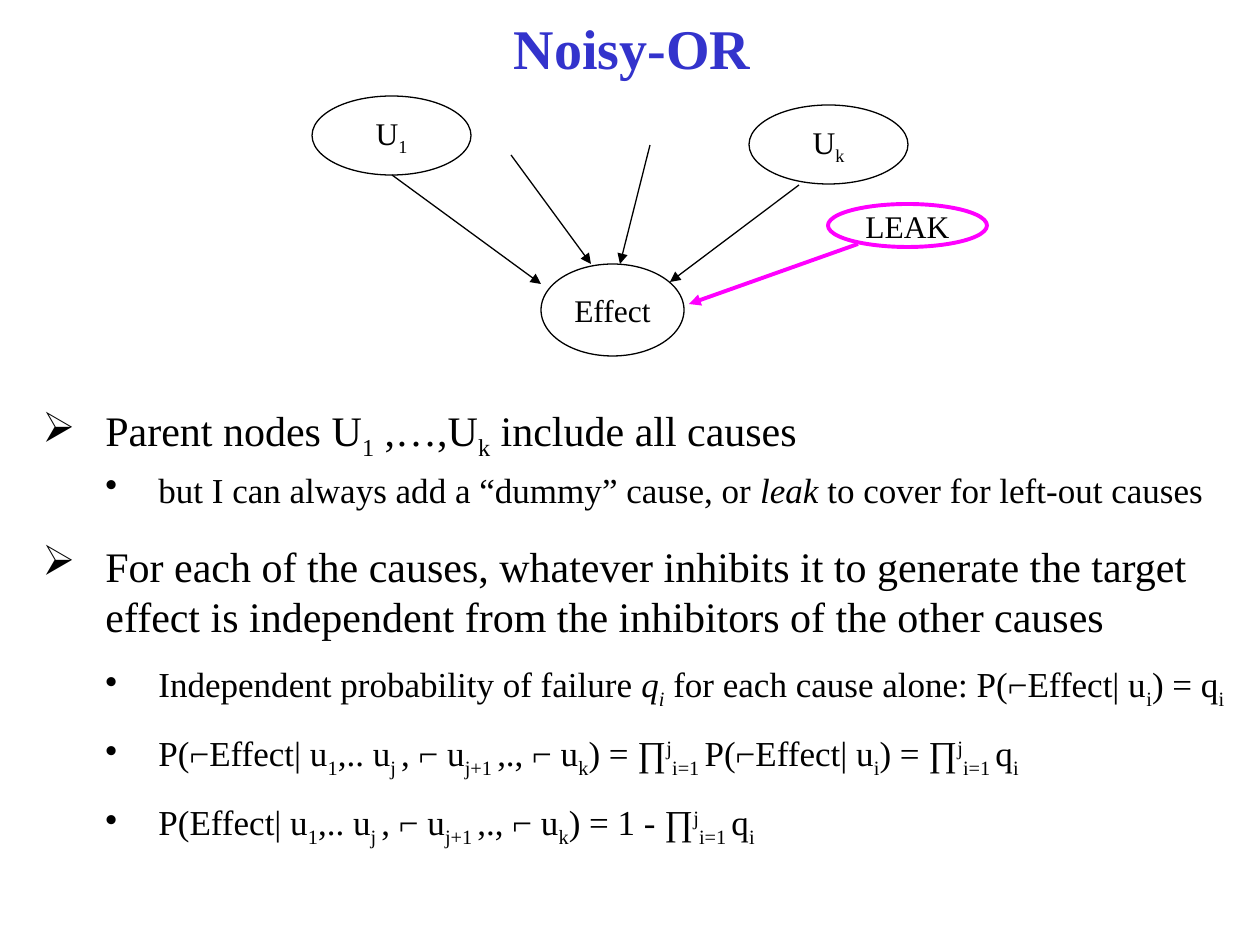
from pptx import Presentation, util as u
from pptx.dml.color import RGBColor
from pptx.enum import shapes, text
from pptx.oxml.ns import qn
from lxml import etree

PX = 914400 / 126
FONT = "Times New Roman"
BLACK, BLUE, PINK = "000000", "3333CC", "FF00FF"
BASELINE = {"sub": "-25000", "sup": "30000"}

TITLE = "Noisy-OR"
NODES = [
    ((312, 96, 159, 79), [("U", ""), ("1", "sub")], BLACK, 0.75),
    ((541, 264, 143, 92), [("Effect", "")], BLACK, 0.75),
    ((749, 105, 159, 79), [("U", ""), ("k", "sub")], BLACK, 0.75),
    ((828, 204, 159, 43), [("LEAK", "")], PINK, 2.25),
]
ARROWS = [
    ((392, 175), (541, 284), BLACK, 0.75),
    ((799, 185), (670, 282), BLACK, 0.75),
    ((511, 155), (591, 264), BLACK, 0.75),
    ((650, 145), (620, 264), BLACK, 0.75),
    ((858, 244), (689, 304), PINK, 2.25),
]

CAUSES = [("1", "sub"), (",.. u", ""), ("j ", "sub"), (", ⌐ u", ""),
          ("j+1 ", "sub"), (",., ⌐ u", ""), ("k", "sub")]
PRODUCT = [("j", "sup"), ("i=1 ", "sub")]
PRODUCT_Q = PRODUCT + [("q", ""), ("i", "sub")]
BODY = [
    (0, 0, 1, [("Parent nodes U", ""), ("1", "sub"), (" ,…,U", ""), ("k", "sub"),
               (" include all causes", "")]),
    (1, 4, 1, [("but I can always add a “dummy” cause, or ", ""), ("leak", "italic"),
               (" to cover for left-out causes", "")]),
    (0, 17, 1, [("For each of the causes, whatever inhibits it to generate the target "
                 "effect is independent from the inhibitors of the other causes", "")]),
    (1, 4, 1.3, [("Independent probability of failure ", ""), ("q", "italic"),
                 ("i", "italic sub"), (" for each cause alone: P(⌐Effect| u", ""),
                 ("i", "sub"), (") = q", ""), ("i", "sub")]),
    (1, 4, 1.3, [("P(⌐Effect| u", "")] + CAUSES + [(") = ∏", "")] + PRODUCT
     + [("P(⌐Effect| u", ""), ("i", "sub"), (") = ∏", "")] + PRODUCT_Q),
    (1, 4, 1.3, [("P(Effect| u", "")] + CAUSES + [(") = 1 - ∏", "")] + PRODUCT_Q),
]
LEVELS = [(24, 63, 63, "➢"), (20, 116, 53, "•")]


def px(*values):
    return [round(v * PX) for v in values]


def rgb(color):
    return RGBColor.from_string(color)


def add_runs(p, runs, size, color=BLACK, bold=False):
    for words, style in runs:
        r = p.add_run()
        r.text = words
        f = r.font
        f.name, f.size, f.bold = FONT, u.Pt(size), bold
        f.italic = "italic" in style
        f.color.rgb = rgb(color)
        for key in style.split():
            if key in BASELINE:
                f._element.set("baseline", BASELINE[key])


def add_bullet(p, left, hang, char):
    pPr = p._p.get_or_add_pPr()
    pPr.set("marL", str(px(left)[0]))
    pPr.set("indent", str(px(-hang)[0]))
    etree.SubElement(pPr, qn("a:buChar")).set("char", char)


def add_node(s, box, runs, color, width):
    sp = s.shapes.add_shape(shapes.MSO_SHAPE.OVAL, *px(*box))
    sp.shadow.inherit = False
    sp.fill.background()
    sp.line.color.rgb = rgb(color)
    sp.line.width = u.Pt(width)
    tf = sp.text_frame
    tf.word_wrap = False
    tf.vertical_anchor = text.MSO_ANCHOR.MIDDLE
    p = tf.paragraphs[0]
    p.alignment = text.PP_ALIGN.CENTER
    add_runs(p, runs, 18)


def add_arrow(s, start, end, color, width):
    c = s.shapes.add_connector(shapes.MSO_CONNECTOR.STRAIGHT, *px(*start, *end))
    c.line.color.rgb = rgb(color)
    c.line.width = u.Pt(width)
    etree.SubElement(c.line._get_or_add_ln(), qn("a:tailEnd")).set("type", "triangle")
    etree.SubElement(c._element.spPr, qn("a:effectLst"))


def add_title(s):
    sp = s.shapes.title
    sp.left, sp.top, sp.width, sp.height = px(44, 0, 1176, 95)
    tf = sp.text_frame
    tf.vertical_anchor = text.MSO_ANCHOR.MIDDLE
    p = tf.paragraphs[0]
    p.alignment = text.PP_ALIGN.CENTER
    add_runs(p, [(TITLE, "")], 32, BLUE, True)


def add_body(s):
    tf = s.shapes.add_textbox(*px(30, 398, 1230, 460)).text_frame
    tf.word_wrap = True
    for i, (level, before, spacing, runs) in enumerate(BODY):
        p = tf.add_paragraph() if i else tf.paragraphs[0]
        size, left, hang, char = LEVELS[level]
        p.level = level
        p.line_spacing = spacing
        p.space_before = u.Pt(before)
        add_bullet(p, left, hang, char)
        add_runs(p, runs, size)


def main():
    prs = Presentation()
    prs.slide_width, prs.slide_height = px(1260, 945)
    s = prs.slides.add_slide(prs.slide_layouts[5])
    add_title(s)
    add_body(s)
    for node in NODES:
        add_node(s, *node)
    for arrow in ARROWS:
        add_arrow(s, *arrow)
    prs.save("out.pptx")


if __name__ == "__main__":
    main()
